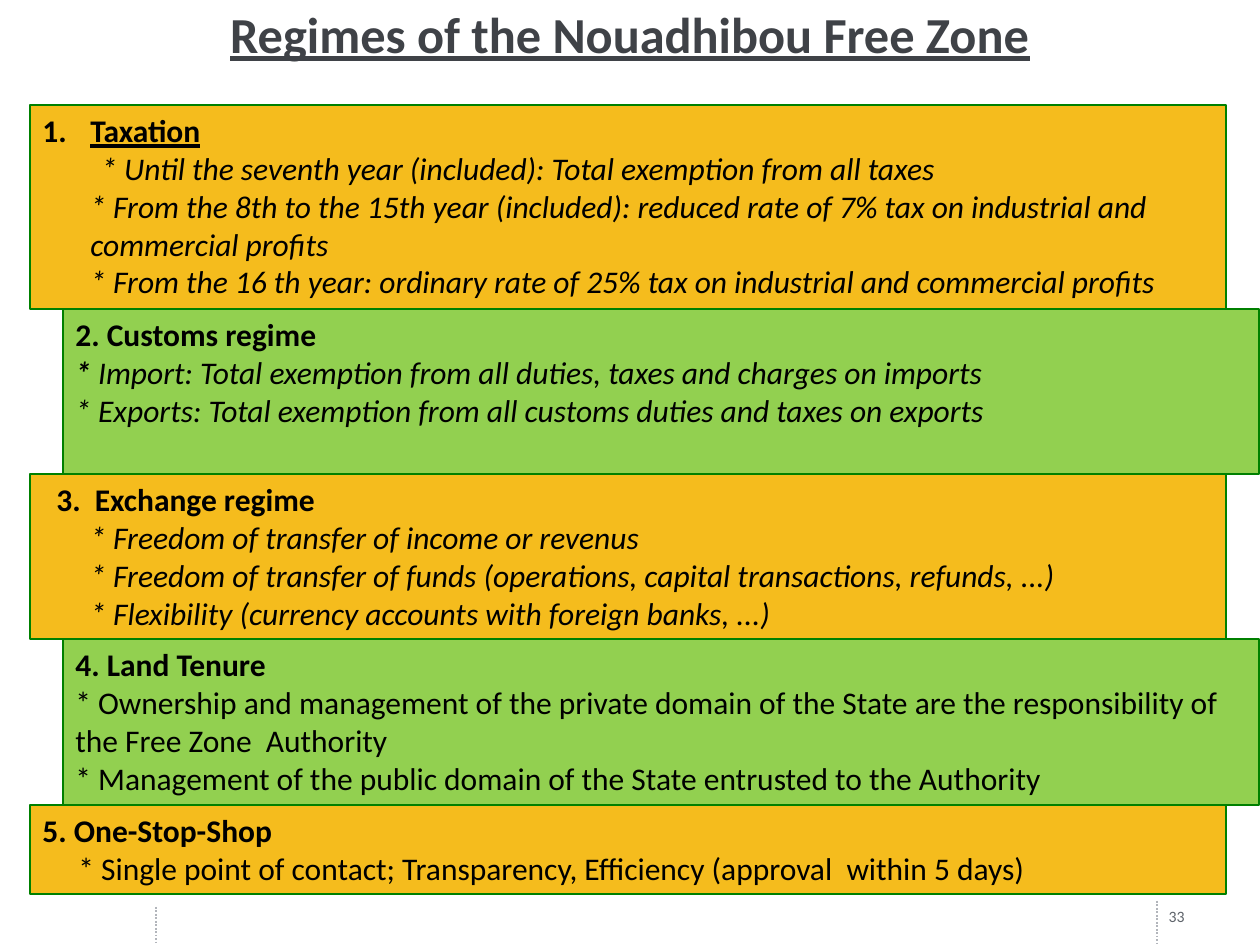
from lxml.etree import SubElement
from pptx import Presentation
from pptx.dml.color import RGBColor
from pptx.enum.dml import MSO_LINE
from pptx.enum.shapes import MSO_CONNECTOR, MSO_SHAPE
from pptx.enum.text import MSO_ANCHOR, PP_ALIGN
from pptx.oxml.ns import qn
from pptx.util import Pt

SCALE = 914400 / 126
FONT = "Calibri"
COLORS = {
    "gold": "F5BC1D",
    "green": "92D050",
    "border": "008000",
    "text": "000000",
    "title": "3F4247",
    "number": "5E636A",
    "rule": "B2B5BB",
}
BAND_LEFTS = (30, 63)
BAND_FILLS = ("gold", "green")
BAND_WIDTH = 1196
BAND_EDGES = (105, 309, 474, 639, 805, 894)
HANG = 48

# Each line: left margin, first-line offset, runs of (text, style letters)
REGIMES = [
    [
        (HANG, -HANG, [("Taxation", "bu")]),
        (HANG, 11, [("* Until the seventh year (included): Total exemption from all taxes", "i")]),
        (HANG, 0, [("* From the 8th to the 15th year (included): reduced rate of 7% tax "
                    "on industrial and commercial profits", "i")]),
        (HANG, 0, [("* From the 16 th year: ordinary rate of 25% tax on industrial "
                    "and commercial profits", "i")]),
    ],
    [
        (0, 0, [("2. Customs regime", "b")]),
        (0, 0, [("* ", "bi"),
                ("Import: Total exemption from all duties, taxes and charges on imports", "i")]),
        (0, 0, [("* Exports: Total exemption from all customs duties and taxes on exports", "i")]),
    ],
    [
        (14, 0, [("3.  Exchange regime", "b")]),
        (HANG, 0, [("* Freedom of transfer of income or revenus", "i")]),
        (HANG, 0, [("* Freedom of transfer of funds (operations, capital transactions, "
                    "refunds, ...)", "i")]),
        (HANG, 0, [("* Flexibility (currency accounts with foreign banks, ...)", "i")]),
    ],
    [
        (0, 0, [("4. Land Tenure", "b")]),
        (0, 0, [("* Ownership and management of the private domain of the State are "
                 "the responsibility of the Free Zone  Authority", "")]),
        (0, 0, [("* Management of the public domain of the State entrusted to the Authority", "")]),
    ],
    [
        (0, 0, [("5. One-Stop-Shop", "b")]),
        (36, 0, [("* Single point of contact; Transparency, Efficiency "
                  "(approval  within 5 days)", "")]),
    ],
]


def px(n):
    return round(n * SCALE)


def rgb(name):
    return RGBColor.from_string(COLORS[name])


def add_run(p, text, size, color, style=""):
    r = p.add_run()
    r.text = text
    font = r.font
    font.name = FONT
    font.size = Pt(size)
    font.bold = "b" in style
    font.italic = "i" in style
    font.underline = "u" in style
    font.color.rgb = rgb(color)


def add_label(s, box, text, size, color, align, anchor, style=""):
    tf = s.shapes.add_textbox(*map(px, box)).text_frame
    tf.word_wrap = True
    tf.vertical_anchor = anchor
    p = tf.paragraphs[0]
    p.alignment = align
    add_run(p, text, size, color, style)


def add_dotted_rule(s, x, top, bottom):
    line = s.shapes.add_connector(MSO_CONNECTOR.STRAIGHT, px(x), px(top), px(x), px(bottom))
    line.line.color.rgb = rgb("rule")
    line.line.width = Pt(1)
    line.line.dash_style = MSO_LINE.ROUND_DOT
    SubElement(line._element.spPr, qn("a:effectLst"))


def indent(p, left, first):
    pPr = p._p.get_or_add_pPr()
    pPr.set("marL", str(px(left)))
    pPr.set("indent", str(px(first)))
    return pPr


def add_band(s, left, top, bottom, fill, lines):
    sp = s.shapes.add_shape(MSO_SHAPE.RECTANGLE, px(left), px(top), px(BAND_WIDTH), px(bottom - top))
    sp.shadow.inherit = False
    sp.fill.solid()
    sp.fill.fore_color.rgb = rgb(fill)
    sp.line.color.rgb = rgb("border")
    sp.line.width = Pt(0.75)
    tf = sp.text_frame
    tf.word_wrap = True
    tf.vertical_anchor = MSO_ANCHOR.TOP
    for i, (margin, first, runs) in enumerate(lines):
        p = tf.add_paragraph() if i else tf.paragraphs[0]
        p.alignment = PP_ALIGN.LEFT
        pPr = indent(p, margin, first)
        if first < 0:
            SubElement(pPr, qn("a:buFont"), typeface="+mj-lt")
            SubElement(pPr, qn("a:buAutoNum"), type="arabicPeriod")
        for text, style in runs:
            add_run(p, text, 18, "text", style)


def main():
    prs = Presentation()
    prs.slide_width, prs.slide_height = px(1260), px(945)
    s = prs.slides.add_slide(prs.slide_layouts[6])
    add_dotted_rule(s, 156, 907, 951)
    add_dotted_rule(s, 1157, 901, 945)
    add_label(s, (903, 882, 294, 50), "33", 9, "number", PP_ALIGN.RIGHT, MSO_ANCHOR.BOTTOM)
    add_label(s, (63, 0, 1134, 67), "Regimes of the Nouadhibou Free Zone", 28.8, "title",
              PP_ALIGN.CENTER, MSO_ANCHOR.MIDDLE, "bu")
    for i, lines in enumerate(REGIMES):
        add_band(s, BAND_LEFTS[i % 2], BAND_EDGES[i], BAND_EDGES[i + 1], BAND_FILLS[i % 2], lines)
    prs.save("out.pptx")


if __name__ == "__main__":
    main()
